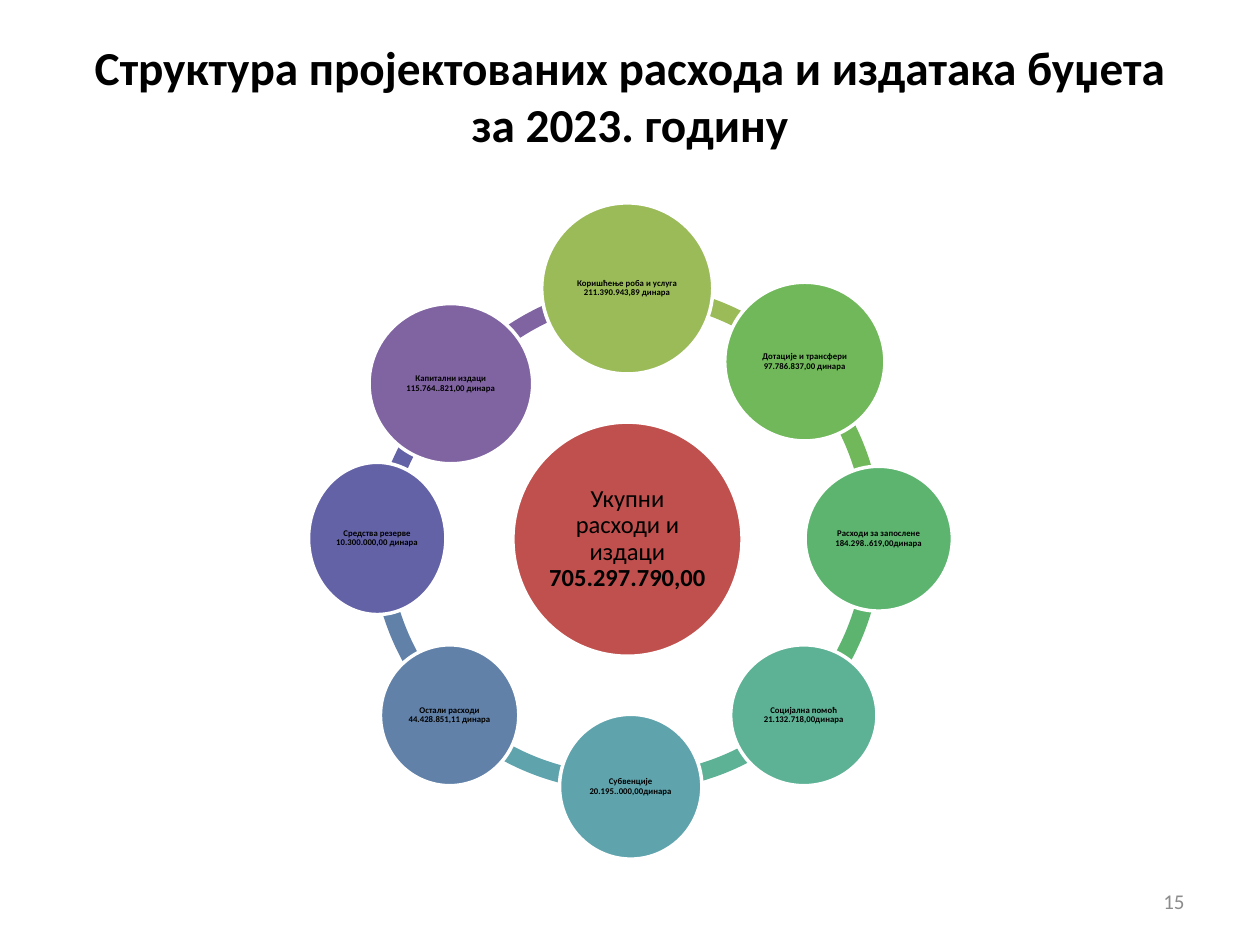
from dataclasses import dataclass

from pptx import Presentation
from pptx import util as u
from pptx.dml.color import RGBColor
from pptx.enum import shapes, text


@dataclass(frozen=True)
class Theme:
    font: str = "Calibri"
    ink: str = "000000"
    muted: str = "8C8C8C"
    outline: str = "FFFFFF"
    center: str = "C0504D"
    title_size: float = 27
    center_size: float = 14
    label_size: float = 5
    number_size: float = 12


THEME = Theme()
RING_SIZE = 10.29
RING_THICKNESS = 0.034

# Clockwise from the top: name, amount, colour, circle box (cm),
# ring corner (cm), start and end angle of the ring segment (degrees)
ITEMS = [
    ("Коришћење роба и услуга", "211.390.943,89 динара", "9BBB59",
     (10.92, 4.09, 3.45, 3.45), (7.49, 5.72), (270, 315)),
    ("Дотације и трансфери", "97.786.837,00 динара", "70B85A",
     (14.61, 5.69, 3.23, 3.2), (7.49, 5.72), (315, 0)),
    ("Расходи за запослене", "184.298..619,00динара", "5CB46F",
     (16.23, 9.4, 2.97, 2.92), (7.49, 5.72), (0, 45)),
    ("Социјална помоћ", "21.132.718,00динара", "5DB195",
     (14.73, 13, 2.95, 2.84), (7.57, 5.66), (45.93, 89.8)),
    ("Субвенције", "20.195..000,00динара", "5FA4AD",
     (11.28, 14.4, 2.87, 2.92), (7.44, 5.66), (88.5, 134.1)),
    ("Остали расходи", "44.428.851,11 динара", "6181A9",
     (7.67, 13, 2.79, 2.84), (7.49, 5.72), (135, 180)),
    ("Средства резерве", "10.300.000,00 динара", "6362A6",
     (6.22, 9.32, 2.77, 3.07), (7.47, 6.22), (185.81, 225.94)),
    ("Капитални издаци", "115.764..821,00 динара", "8064A2",
     (7.44, 6.12, 3.3, 3.23), (7.95, 5.69), (217.83, 264.88)),
]


def cm(*values):
    return [u.Cm(v) for v in values]


def format_run(r, size, color=THEME.ink, bold=False):
    r.font.name = THEME.font
    r.font.size = u.Pt(size)
    r.font.bold = bold
    r.font.color.rgb = RGBColor.from_string(color)


def add_text(s, box, content, align, size, color=THEME.ink, bold=False):
    tf = s.shapes.add_textbox(*cm(*box)).text_frame
    tf.word_wrap = True
    tf.vertical_anchor = text.MSO_ANCHOR.MIDDLE
    p = tf.paragraphs[0]
    p.text = content
    p.alignment = align
    format_run(p.runs[0], size, color, bold)


def add_filled(group, kind, box, color):
    sp = group.shapes.add_shape(kind, *cm(*box))
    sp.shadow.inherit = False
    sp.fill.solid()
    sp.fill.fore_color.rgb = RGBColor.from_string(color)
    sp.line.fill.background()
    return sp


def add_ring_segment(group, corner, angles, color):
    sp = add_filled(group, shapes.MSO_SHAPE.BLOCK_ARC,
                    (*corner, RING_SIZE, RING_SIZE), color)
    # Angles are stored in 60000ths of a degree, adjustments in 100000ths
    for i, angle in enumerate(angles):
        sp.adjustments[i] = angle * 0.6
    sp.adjustments[2] = RING_THICKNESS


def add_circle(group, box, color, parts, size, inset):
    """Add a circle; parts are (wording, bold) pairs."""
    sp = add_filled(group, shapes.MSO_SHAPE.OVAL, box, color)
    sp.line.color.rgb = RGBColor.from_string(THEME.outline)
    sp.line.width = u.Pt(2)
    tf = sp.text_frame
    tf.word_wrap = True
    tf.vertical_anchor = text.MSO_ANCHOR.MIDDLE
    tf.margin_left = tf.margin_right = u.Cm(inset)
    tf.margin_top = tf.margin_bottom = u.Cm(inset)
    p = tf.paragraphs[0]
    p.alignment = text.PP_ALIGN.CENTER
    p.line_spacing = 0.9
    for wording, bold in parts:
        r = p.add_run()
        r.text = wording
        format_run(r, size, bold=bold)


def main():
    prs = Presentation()
    prs.slide_width, prs.slide_height = cm(25.4, 19.05)
    s = prs.slides.add_slide(prs.slide_layouts[6])

    # Title
    add_text(s, (1.27, 0.74, 22.86, 2.36),
             "Структура пројектованих расхода и издатака буџета за 2023. годину",
             text.PP_ALIGN.CENTER, THEME.title_size, bold=True)

    # Ring behind the circles
    group = s.shapes.add_group_shape()
    for _, _, color, _, corner, angles in reversed(ITEMS):
        add_ring_segment(group, corner, angles, color)

    # Total and its parts
    add_circle(group, (10.34, 8.51, 4.62, 4.72), THEME.center,
               [("Укупни расходи и издаци ", False), ("705.297.790,00", True)],
               THEME.center_size, 0.05)
    for name, amount, color, box, _, _ in ITEMS:
        add_circle(group, box, color, [(f"{name} {amount}", True)],
                   THEME.label_size, 0.02)

    # Slide number
    add_text(s, (18.21, 17.65, 5.92, 1.02), "15",
             text.PP_ALIGN.RIGHT, THEME.number_size, THEME.muted)

    prs.save("out.pptx")


if __name__ == "__main__":
    main()
